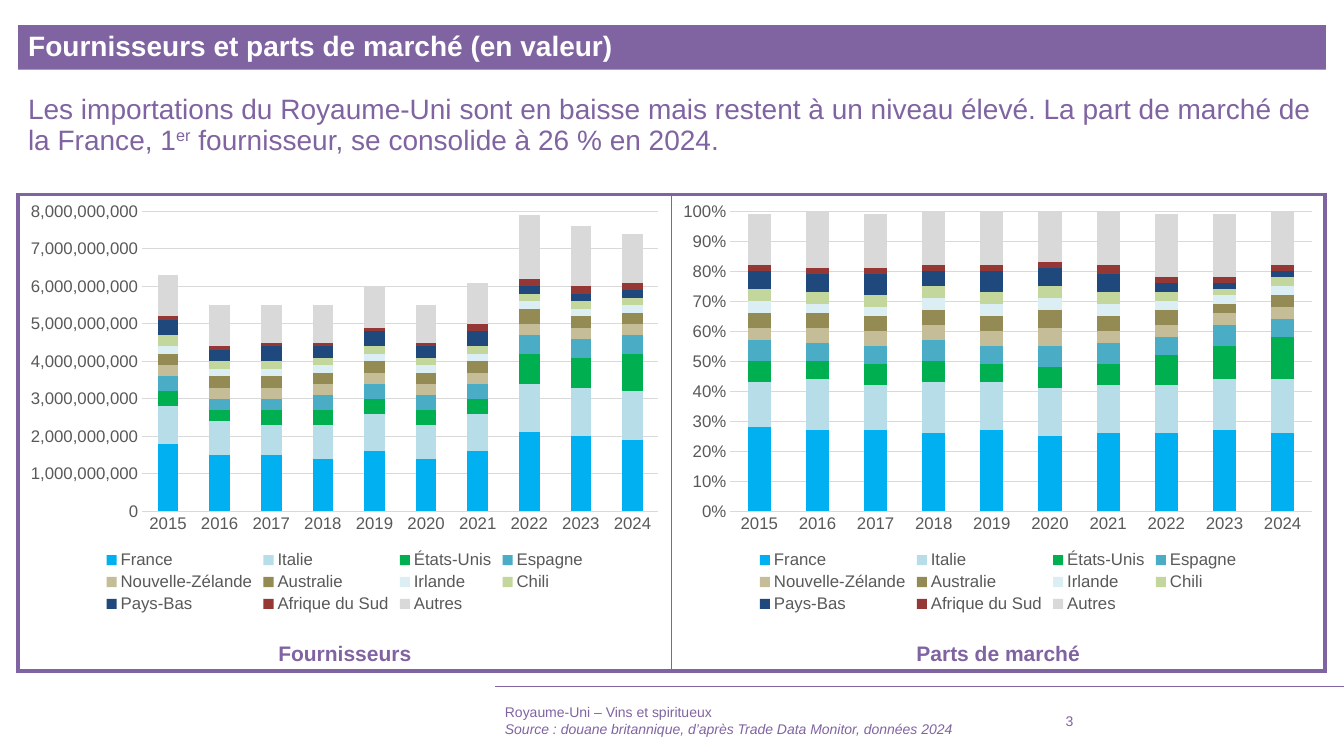
import pptx
import pptx.chart.data
import pptx.dml.color
import pptx.enum.chart
import pptx.enum.shapes
import pptx.enum.text
import pptx.oxml
import pptx.oxml.ns
import pptx.util
from lxml import etree

Inches = pptx.util.Inches
Pt = pptx.util.Pt
ALIGN = pptx.enum.text.PP_ALIGN
ANCHOR = pptx.enum.text.MSO_ANCHOR
PURPLE, GREY, LIGHT_GREY = "8064A2", "595959", "D9D9D9"
YEARS = [str(year) for year in range(2015, 2025)]
# Supplier: colour, imports in hundreds of millions, market share in percent
SUPPLIERS = {
    "France": ("00B0F0", [18, 15, 15, 14, 16, 14, 16, 21, 20, 19],
               [28, 27, 27, 26, 27, 25, 26, 26, 27, 26]),
    "Italie": ("B7DEE8", [10, 9, 8, 9, 10, 9, 10, 13, 13, 13],
               [15, 17, 15, 17, 16, 16, 16, 16, 17, 18]),
    "États-Unis": ("00B050", [4, 3, 4, 4, 4, 4, 4, 8, 8, 10],
                   [7, 6, 7, 7, 6, 7, 7, 10, 11, 14]),
    "Espagne": ("4BACC6", [4, 3, 3, 4, 4, 4, 4, 5, 5, 5],
                [7, 6, 6, 7, 6, 7, 7, 6, 7, 6]),
    "Nouvelle-Zélande": ("C4BD97", [3] * 10, [4, 5, 5, 5, 5, 6, 4, 4, 4, 4]),
    "Australie": ("948A54", [3, 3, 3, 3, 3, 3, 3, 4, 3, 3],
                  [5, 5, 5, 5, 5, 6, 5, 5, 3, 4]),
    "Irlande": ("DBEEF4", [2] * 10, [4, 3, 3, 4, 4, 4, 4, 3, 3, 3]),
    "Chili": ("C3D69B", [3] + [2] * 9, [4, 4, 4, 4, 4, 4, 4, 3, 2, 3]),
    "Pays-Bas": ("1F497D", [4, 3, 4, 3, 4, 3, 4, 2, 2, 2],
                 [6, 6, 7, 5, 7, 6, 6, 3, 2, 2]),
    "Afrique du Sud": ("953735", [1] * 6 + [2] * 4,
                       [2, 2, 2, 2, 2, 2, 3, 2, 2, 2]),
    "Autres": (LIGHT_GREY, [11, 11, 10, 10, 11, 10, 11, 17, 16, 13],
               [17, 19, 18, 18, 18, 18, 19, 21, 21, 18]),
}


def rgb(color):
    return pptx.dml.color.RGBColor.from_string(color)


def inches(box):
    return [Inches(length) for length in box]


def format_font(font, size, color, bold=False, italic=False):
    font.name, font.size, font.bold, font.italic = "Arial", Pt(size), bold, italic
    font.color.rgb = rgb(color)


def add_run(paragraph, text, size=20, color=PURPLE, bold=False, italic=False,
            superscript=False):
    run = paragraph.add_run()
    run.text = text
    format_font(run.font, size, color, bold, italic)
    if superscript:
        run._r.get_or_add_rPr().set("baseline", "30000")


def add_text_box(slide, box, anchor=ANCHOR.TOP):
    frame = slide.shapes.add_textbox(*inches(box)).text_frame
    frame.word_wrap = True
    frame.vertical_anchor = anchor
    return frame


def add_title(slide, box):
    title = slide.shapes.title
    title.left, title.top, title.width, title.height = inches(box)
    title.fill.solid()
    title.fill.fore_color.rgb = rgb(PURPLE)
    frame = title.text_frame
    frame.auto_size = pptx.enum.text.MSO_AUTO_SIZE.NONE
    frame.vertical_anchor = ANCHOR.MIDDLE
    paragraph = frame.paragraphs[0]
    paragraph.alignment, paragraph.line_spacing = ALIGN.LEFT, 0.9
    add_run(paragraph, "Fournisseurs et parts de marché (en valeur)",
            color="FFFFFF", bold=True)


def add_message(slide, box):
    paragraph = add_text_box(slide, box).paragraphs[0]
    paragraph.line_spacing = 0.9
    add_run(paragraph, "Les importations du Royaume-Uni sont en baisse mais restent "
            "à un niveau élevé. La part de marché de la France, 1")
    add_run(paragraph, "er", superscript=True)
    add_run(paragraph, " fournisseur, se consolide à 26 % en 2024.")


def add_borders(cell, widths):
    properties = cell._tc.get_or_add_tcPr()
    for side in "LRTB":
        properties.append(pptx.oxml.parse_xml(
            f'<a:ln{side} {pptx.oxml.ns.nsdecls("a")} w="{Pt(widths[side])}">'
            f'<a:solidFill><a:srgbClr val="{PURPLE}"/></a:solidFill></a:ln{side}>'))
    cell.fill.background()


def add_frame(slide, box):
    """Draw the two-cell table that surrounds the charts."""
    table = slide.shapes.add_table(1, 2, *inches(box)).table
    table.first_row = table.horz_banding = False
    add_borders(table.cell(0, 0), {"L": 3, "R": 1, "T": 3, "B": 3})
    add_borders(table.cell(0, 1), {"L": 1, "R": 3, "T": 3, "B": 3})


def set_plot_layout(chart, layout):
    """Fix the inner plot area, as fractions of the chart."""
    plot_area = chart._chartSpace.chart.plotArea
    for old_layout in plot_area.findall(pptx.oxml.ns.qn("c:layout")):
        plot_area.remove(old_layout)
    values = "".join(f'<c:{name} val="{value}"/>'
                     for name, value in zip("xywh", layout))
    plot_area.insert(0, pptx.oxml.parse_xml(
        f'<c:layout {pptx.oxml.ns.nsdecls("c")}><c:manualLayout>'
        '<c:layoutTarget val="inner"/><c:xMode val="edge"/><c:yMode val="edge"/>'
        f'{values}</c:manualLayout></c:layout>'))


def format_axes(chart, maximum, number_format):
    for axis in (chart.category_axis, chart.value_axis):
        axis.major_tick_mark = pptx.enum.chart.XL_TICK_MARK.NONE
        format_font(axis.tick_labels.font, 12, GREY)
    category_line = chart.category_axis.format.line
    value_axis = chart.value_axis
    value_axis.minimum_scale, value_axis.maximum_scale = 0, maximum
    value_axis.tick_labels.number_format = number_format
    value_axis.tick_labels.number_format_is_linked = False
    value_axis.format.line.fill.background()
    for line in (category_line, value_axis.major_gridlines.format.line):
        line.color.rgb = rgb(LIGHT_GREY)
        line.width = Pt(0.75)


def add_panel(slide, box, caption, column, scale, maximum, step, number_format, layout):
    """Place a stacked chart with its caption at the foot of the box."""
    left, top, width, height = box
    data = pptx.chart.data.CategoryChartData(number_format=number_format)
    data.categories = YEARS
    for name, supplier in SUPPLIERS.items():
        data.add_series(name, [value * scale if scale > 1 else value / 100
                               for value in supplier[column]])
    chart = slide.shapes.add_chart(
        pptx.enum.chart.XL_CHART_TYPE.COLUMN_STACKED,
        *inches((left, top, width, height - 0.54)), data).chart
    format_font(chart.font, 12, "000000")
    chart.has_title = False
    chart.has_legend = True
    chart.legend.position = pptx.enum.chart.XL_LEGEND_POSITION.BOTTOM
    chart.legend.include_in_layout = False
    format_font(chart.legend.font, 12, GREY)
    format_axes(chart, maximum, number_format)
    chart.value_axis.major_unit = step
    plot = chart.plots[0]
    plot.gap_width, plot.overlap, plot.vary_by_categories = 150, 100, False
    for series, (color, *_) in zip(plot.series, SUPPLIERS.values()):
        series.format.fill.solid()
        series.format.fill.fore_color.rgb = rgb(color)
    set_plot_layout(chart, layout)

    paragraph = add_text_box(slide, (left, top + height - 0.35, width, 0.35)).paragraphs[0]
    paragraph.alignment = ALIGN.CENTER
    add_run(paragraph, caption, size=15, bold=True)


def add_footer(slide, box):
    left, top, width, height = box
    rule = slide.shapes.add_connector(
        pptx.enum.shapes.MSO_CONNECTOR.STRAIGHT,
        *inches((left, top, left + width, top)))
    rule.line.color.rgb = rgb(PURPLE)
    rule.line.width = Pt(0.5)
    etree.SubElement(rule._element.spPr, pptx.oxml.ns.qn("a:effectLst"))

    text_top, text_height = top + 0.14, height - 0.14
    source = add_text_box(slide, (left, text_top, 5.43, text_height), ANCHOR.MIDDLE)
    add_run(source.paragraphs[0], "Royaume-Uni – Vins et spiritueux", size=10)
    add_run(source.add_paragraph(), "Source : douane britannique, d’après Trade Data "
            "Monitor, données 2024", size=10, italic=True)
    number = add_text_box(slide, (left + 5.56, text_top, 0.99, text_height), ANCHOR.MIDDLE)
    add_run(number.paragraphs[0], "3", size=10)


def main():
    presentation = pptx.Presentation()
    presentation.slide_width, presentation.slide_height = inches((13.33, 7.5))
    slide = presentation.slides.add_slide(presentation.slide_layouts[5])
    left, top, width, height = frame = (0.18, 1.93, 12.96, 4.73)
    half = width / 2
    add_title(slide, (left, 0.25, 12.97, 0.44))
    add_message(slide, (left, 0.9, width, 0.81))
    add_frame(slide, frame)
    add_panel(slide, (left, top, half, height), "Fournisseurs", 1, 10**8,
              8 * 10**9, 10**9, "#,##0", (0.19, 0.04, 0.79, 0.71))
    add_panel(slide, (left + half, top, half, height), "Parts de marché", 2, 0.01,
              1, 0.1, "0%", (0.09, 0.04, 0.89, 0.71))
    add_footer(slide, (4.91, 6.81, 8.42, 0.54))
    presentation.save("out.pptx")


if __name__ == "__main__":
    main()
